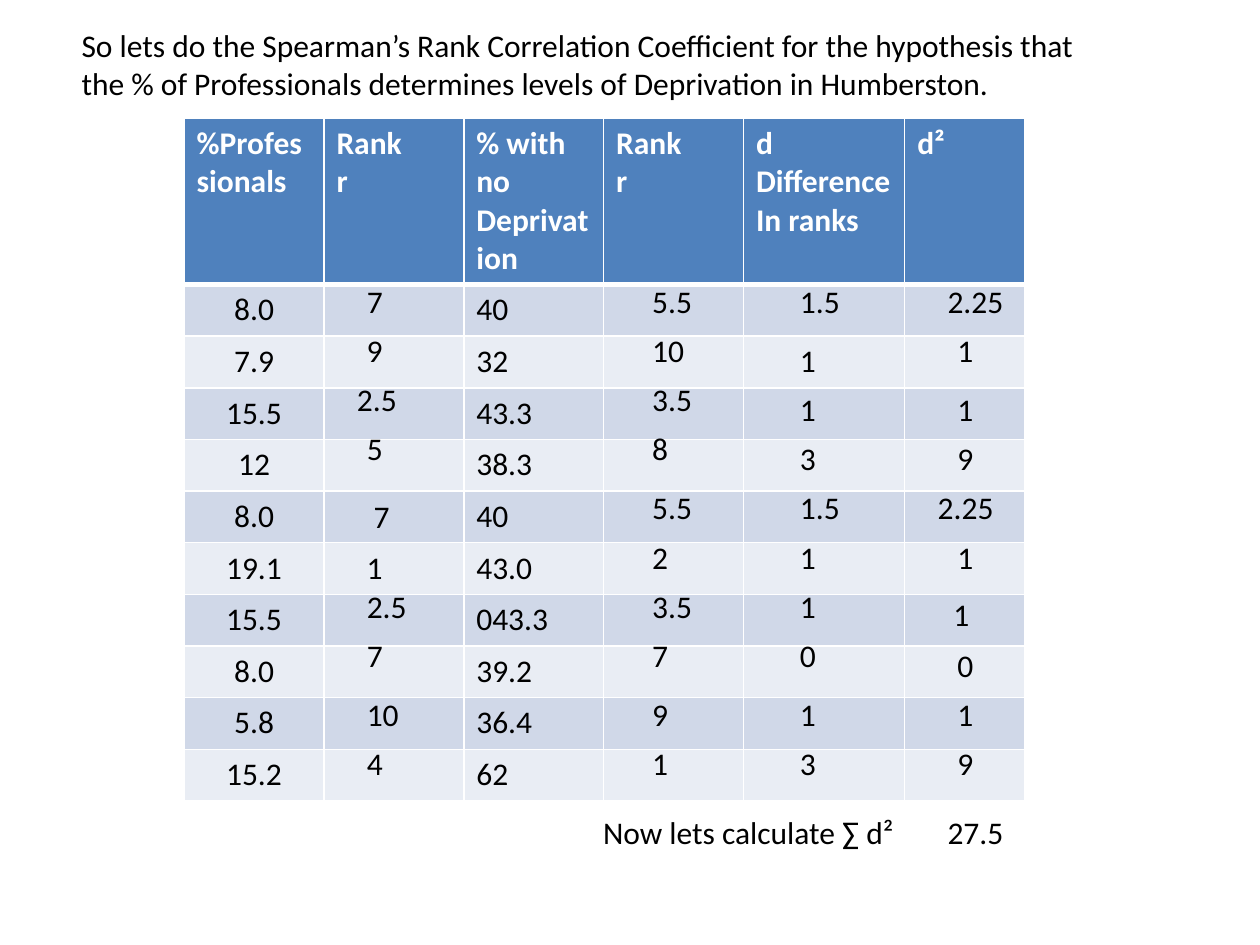
"""Build the Spearman's rank correlation slide with its table and worked ranks."""
from dataclasses import dataclass

from lxml.etree import SubElement
from pptx import Presentation
from pptx.dml.color import RGBColor
from pptx.enum.text import MSO_ANCHOR, MSO_AUTO_SIZE, PP_ALIGN
from pptx.oxml.ns import qn
from pptx.util import Emu, Inches, Pt

COLORS = {"text": "000000", "white": "FFFFFF", "header": "4F81BD",
          "odd": "D0D8E8", "even": "E9EDF4"}
FONT = "Calibri"
GRID_COLUMNS, GRID_ROWS = 128, 96
SLIDE_WIDTH, SLIDE_HEIGHT = Inches(10), Inches(7.5)
LINE_HEIGHT = 5.1
ROW_TOPS = (28, 33, 38, 43, 49, 54, 59, 64, 70, 75)

TITLE = ("So lets do the Spearman’s Rank Correlation Coefficient for the hypothesis that "
         "the % of Professionals determines levels of Deprivation in Humberston.")
HEADERS = ("%Professionals", "Rank\nr", "% with no Deprivation", "Rank\nr",
           "d\nDifference\nIn ranks", "d²")
COLUMN_WIDTHS = (1.11, 1.11, 1.11, 1.11, 1.28, 0.95)
HEADER_HEIGHT, BODY_HEIGHT = 1.29, 0.41
PROFESSIONALS = ("8.0", "7.9", "15.5", "12", "8.0", "19.1", "15.5", "8.0", "5.8", "15.2")
NO_DEPRIVATION = ("40", "32", "43.3", "38.3", "40", "43.0", "043.3", "39.2", "36.4", "62")


@dataclass(frozen=True)
class Mark:
    """A written value: its width and its shift from its place, in grid units."""
    text: str
    width: float = 6
    right: float = 0
    down: float = 0


@dataclass(frozen=True)
class MarkColumn:
    """A column of ten values starting at one grid column."""
    left: float
    marks: tuple[Mark, ...]


MARK_COLUMNS = (
    MarkColumn(36, (Mark("7"), Mark("9", 5), Mark("2.5", 7, right=-1), Mark("5"),
                    Mark("7", 4, 0.7, 0.9), Mark("1", 5, down=1), Mark("2.5", 7),
                    Mark("7"), Mark("10"), Mark("4"))),
    MarkColumn(65, (Mark("5.5", 7), Mark("10"), Mark("3.5", 8), Mark("8"), Mark("5.5", 8),
                    Mark("2"), Mark("3.5", 8), Mark("7"), Mark("9", 5), Mark("1"))),
    MarkColumn(80, (Mark("1.5", 7), Mark("1", 8, down=1), Mark("1", down=1),
                    Mark("3", 7, down=1), Mark("1.5", 7), Mark("1"), Mark("1"),
                    Mark("0", 5), Mark("1"), Mark("3"))),
    MarkColumn(96, (Mark("2.25", 9, right=-1), Mark("1", 5), Mark("1", down=1),
                    Mark("9", 5, down=1), Mark("2.25", 10, right=-2), Mark("1", 4),
                    Mark("1", 6, -0.4, 0.8), Mark("0", 5, down=1), Mark("1", 4),
                    Mark("9", 5))),
)


def across(units: float) -> Emu:
    """Turn grid columns into a length."""
    return Emu(round(SLIDE_WIDTH * units / GRID_COLUMNS))


def down(units: float) -> Emu:
    """Turn grid rows into a length."""
    return Emu(round(SLIDE_HEIGHT * units / GRID_ROWS))


def write(text_frame, text: str, *, color: str = "text", bold: bool = False,
          align=PP_ALIGN.LEFT, size: float = 18) -> None:
    """Put formatted text in a frame, one paragraph per line."""
    text_frame.text = text
    for paragraph in text_frame.paragraphs:
        paragraph.alignment = align
        for run in paragraph.runs:
            run.font.name = FONT
            run.font.size = Pt(size)
            run.font.bold = bold
            run.font.color.rgb = RGBColor.from_string(COLORS[color])


def add_title(slide, text: str) -> None:
    """Place the question in the title placeholder."""
    title = slide.shapes.title
    title.left, title.top = across(7), down(2)
    title.width, title.height = across(106), down(9.1)
    title.text_frame.word_wrap = True
    title.text_frame.auto_size = MSO_AUTO_SIZE.NONE
    title.text_frame.vertical_anchor = MSO_ANCHOR.TOP
    write(title.text_frame, text)


def add_text(slide, text: str, left: float, top: float, width: float) -> None:
    """Add a one-line text box at a grid place."""
    box = slide.shapes.add_textbox(across(left), down(top), across(width), down(LINE_HEIGHT))
    box.text_frame.word_wrap = True
    box.text_frame.auto_size = MSO_AUTO_SIZE.SHAPE_TO_FIT_TEXT
    write(box.text_frame, text)


def style_cell(cell, fill: str, top: float = 1, bottom: float = 1) -> None:
    """Give a cell white borders, in points, and a plain fill."""
    properties = cell._tc.get_or_add_tcPr()
    for side, points in (("L", 1), ("R", 1), ("T", top), ("B", bottom)):
        line = SubElement(properties, qn(f"a:ln{side}"), w=str(Pt(points)))
        SubElement(SubElement(line, qn("a:solidFill")), qn("a:srgbClr"), val=COLORS["white"])
    cell.fill.solid()
    cell.fill.fore_color.rgb = RGBColor.from_string(COLORS[fill])


def add_data_table(slide) -> None:
    """Add the table of both measures with columns left open for the ranks."""
    row_count = len(PROFESSIONALS)
    table = slide.shapes.add_table(
        row_count + 1, len(HEADERS), across(18.7), down(12), Inches(sum(COLUMN_WIDTHS)),
        Inches(HEADER_HEIGHT + row_count * BODY_HEIGHT)).table
    table.horz_banding = False
    for column, width in zip(table.columns, COLUMN_WIDTHS):
        column.width = Inches(width)
    for index, row in enumerate(table.rows):
        row.height = Inches(BODY_HEIGHT if index else HEADER_HEIGHT)
        fill = ("odd" if index % 2 else "even") if index else "header"
        for cell in row.cells:
            style_cell(cell, fill, top=3 if index == 1 else 1, bottom=1 if index else 3)
    for index, header in enumerate(HEADERS):
        write(table.cell(0, index).text_frame, header, color="white", bold=True)
    for index, (professionals, deprivation) in enumerate(zip(PROFESSIONALS, NO_DEPRIVATION), 1):
        write(table.cell(index, 0).text_frame, professionals, align=PP_ALIGN.CENTER)
        write(table.cell(index, 2).text_frame, deprivation)


def add_marks(slide, column: MarkColumn) -> None:
    """Write one column of values over the table."""
    for mark, top in zip(column.marks, ROW_TOPS):
        add_text(slide, mark.text, column.left + mark.right, top + mark.down, mark.width)


def main() -> None:
    """Build and save the presentation."""
    presentation = Presentation()
    presentation.slide_width, presentation.slide_height = SLIDE_WIDTH, SLIDE_HEIGHT
    slide = presentation.slides.add_slide(presentation.slide_layouts.get_by_name("Title Only"))
    add_title(slide, TITLE)
    add_data_table(slide)
    for column in MARK_COLUMNS:
        add_marks(slide, column)
    add_text(slide, "Now lets calculate ∑ d²", 60, 82, 34)
    add_text(slide, "27.5", 95, 82, 10.4)
    presentation.save("out.pptx")


if __name__ == "__main__":
    main()
